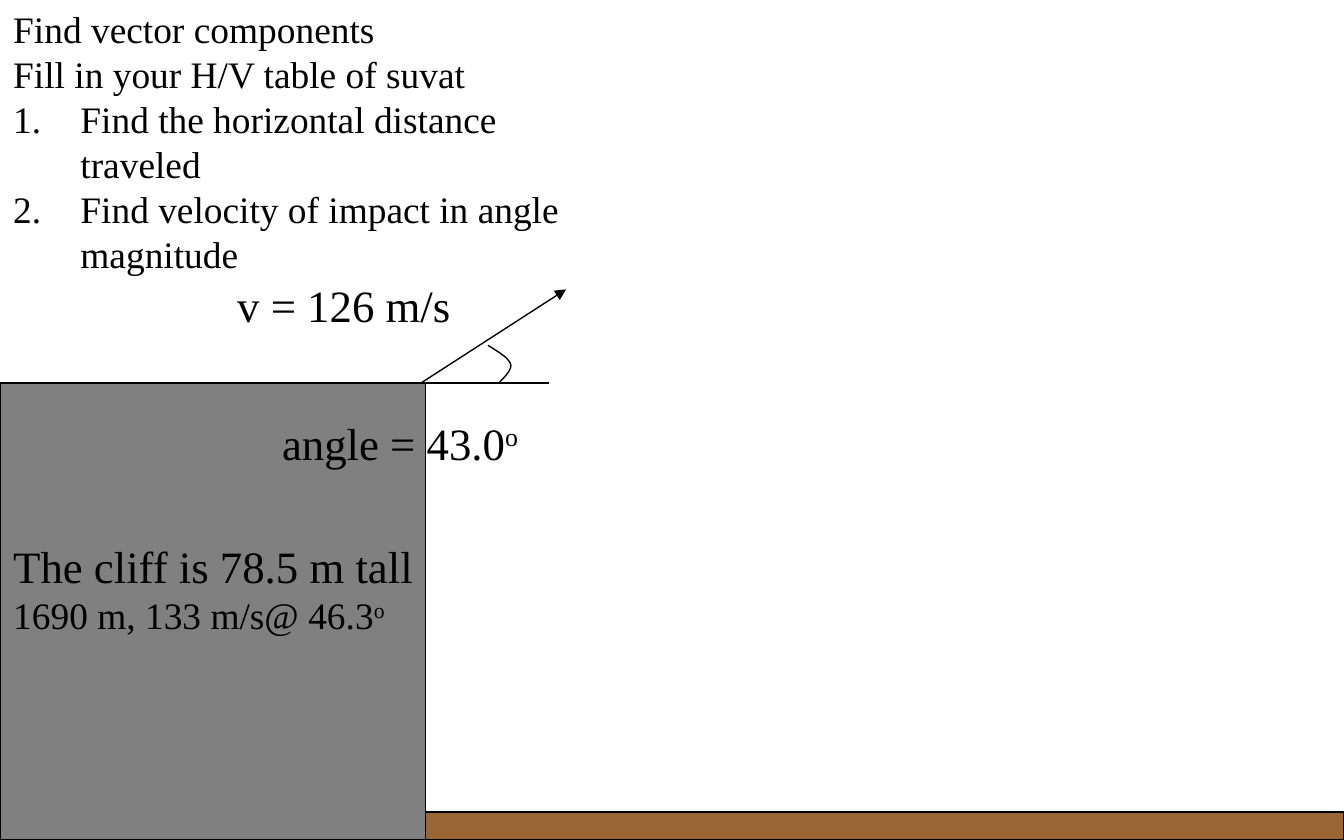
from lxml import etree
from pptx import Presentation
from pptx.dml.color import RGBColor
from pptx.enum.shapes import MSO_CONNECTOR, MSO_SHAPE
from pptx.enum.text import MSO_AUTO_SIZE
from pptx.oxml.ns import qn
from pptx.util import Pt

RECTANGLE = MSO_SHAPE.RECTANGLE
STRAIGHT = MSO_CONNECTOR.STRAIGHT
GROW = MSO_AUTO_SIZE.SHAPE_TO_FIT_TEXT

WIDTH, HEIGHT = 720, 450
CLIFF_TOP, CLIFF_WIDTH = 205.2, 228
GROUND_TOP = 435
BLACK = "000000"


def outline(part):
    """Give a shape or connector the thin black line used all over the slide."""
    part.line.color.rgb = RGBColor.from_string(BLACK)
    part.line.width = Pt(0.75)


def add_text(box, wrap, paragraphs):
    """Paragraphs are (size, text, superscript, indent, numbered)."""
    left, top, width, height = map(Pt, box)
    frame = slide.shapes.add_textbox(left, top, width, height).text_frame
    frame.word_wrap = wrap
    frame.auto_size = GROW
    for index, (size, text, superscript, indent, numbered) in enumerate(paragraphs):
        paragraph = frame.add_paragraph() if index else frame.paragraphs[0]
        properties = paragraph._p.get_or_add_pPr()
        if indent:
            properties.set("marL", str(Pt(indent)))
            properties.set("indent", str(-Pt(indent)))
        if numbered:
            etree.SubElement(properties, qn("a:buAutoNum"), type="arabicPeriod")
        for part, baseline in ((text, None), (superscript, "30000")):
            if not part:
                continue
            run = paragraph.add_run()
            run.text = part
            for key, value in {"name": "Times New Roman", "size": Pt(size)}.items():
                setattr(run.font, key, value)
            run.font.color.rgb = RGBColor.from_string(BLACK)
            if baseline:
                run._r.get_or_add_rPr().set("baseline", baseline)


presentation = Presentation()
presentation.slide_width, presentation.slide_height = Pt(WIDTH), Pt(HEIGHT)
slide = presentation.slides.add_slide(presentation.slide_layouts[6])

# Ground and cliff
for left, top, right, color in (
    (198, GROUND_TOP, WIDTH, "996633"),
    (0, CLIFF_TOP, CLIFF_WIDTH, "808080"),
):
    block = slide.shapes.add_shape(
        RECTANGLE, Pt(left), Pt(top), Pt(right - left), Pt(HEIGHT - top))
    block.shadow.inherit = False
    block.fill.solid()
    block.fill.fore_color.rgb = RGBColor.from_string(color)
    outline(block)

# Velocity vector and horizontal reference
for start_x, end_x, end_y, arrow in (
    (225.5, 303.3, 155, True),
    (CLIFF_WIDTH, 294, CLIFF_TOP, False),
):
    ray = slide.shapes.add_connector(
        STRAIGHT, Pt(start_x), Pt(CLIFF_TOP), Pt(end_x), Pt(end_y))
    outline(ray)
    if arrow:
        etree.SubElement(ray.line._get_or_add_ln(), qn("a:tailEnd"), type="triangle")
    etree.SubElement(ray._element.spPr, qn("a:effectLst"))

# Angle mark: two cubic curves, sampled into short segments
curves = (
    ((261.4, 185), (267.1, 188.6), (272.2, 191.5), (273.6, 195.1)),
    ((273.6, 195.1), (274.3, 198), (270.7, 201.6), (267.2, CLIFF_TOP)),
)
STEPS = 12
arc_points = []
for curve in curves:
    for step in range(STEPS + 1):
        t = step / STEPS
        weights = ((1 - t) ** 3, 3 * t * (1 - t) ** 2, 3 * t * t * (1 - t), t ** 3)
        arc_points.append(tuple(
            Pt(sum(w * point[axis] for w, point in zip(weights, curve)))
            for axis in (0, 1)))
builder = slide.shapes.build_freeform(*arc_points[0])
builder.add_line_segments(arc_points[1:], close=False)
angle_arc = builder.convert_to_shape()
angle_arc.shadow.inherit = False
angle_arc.fill.background()
outline(angle_arc)

# Given values and tasks
add_text((144, 219, 143.3, 36.4), False, [(24, "angle = 43.0", "o", 0, False)])
add_text((120, 145, 129.6, 36.4), False, [(24, "v = 126 m/s", "", 0, False)])
add_text((0, 0, 336, 152.6), True, [
    (20, "Find vector components", "", 36, False),
    (20, "Fill in your H/V table of suvat", "", 36, False),
    (20, "Find the horizontal distance traveled", "", 36, True),
    (20, "Find velocity of impact in angle magnitude", "", 36, True),
])
add_text((0, 285, 231, 60.5), False, [
    (24, "The cliff is 78.5 m tall", "", 0, False),
    (20, "1690 m, 133 m/s@ 46.3", "o", 0, False),
])

presentation.save("out.pptx")
